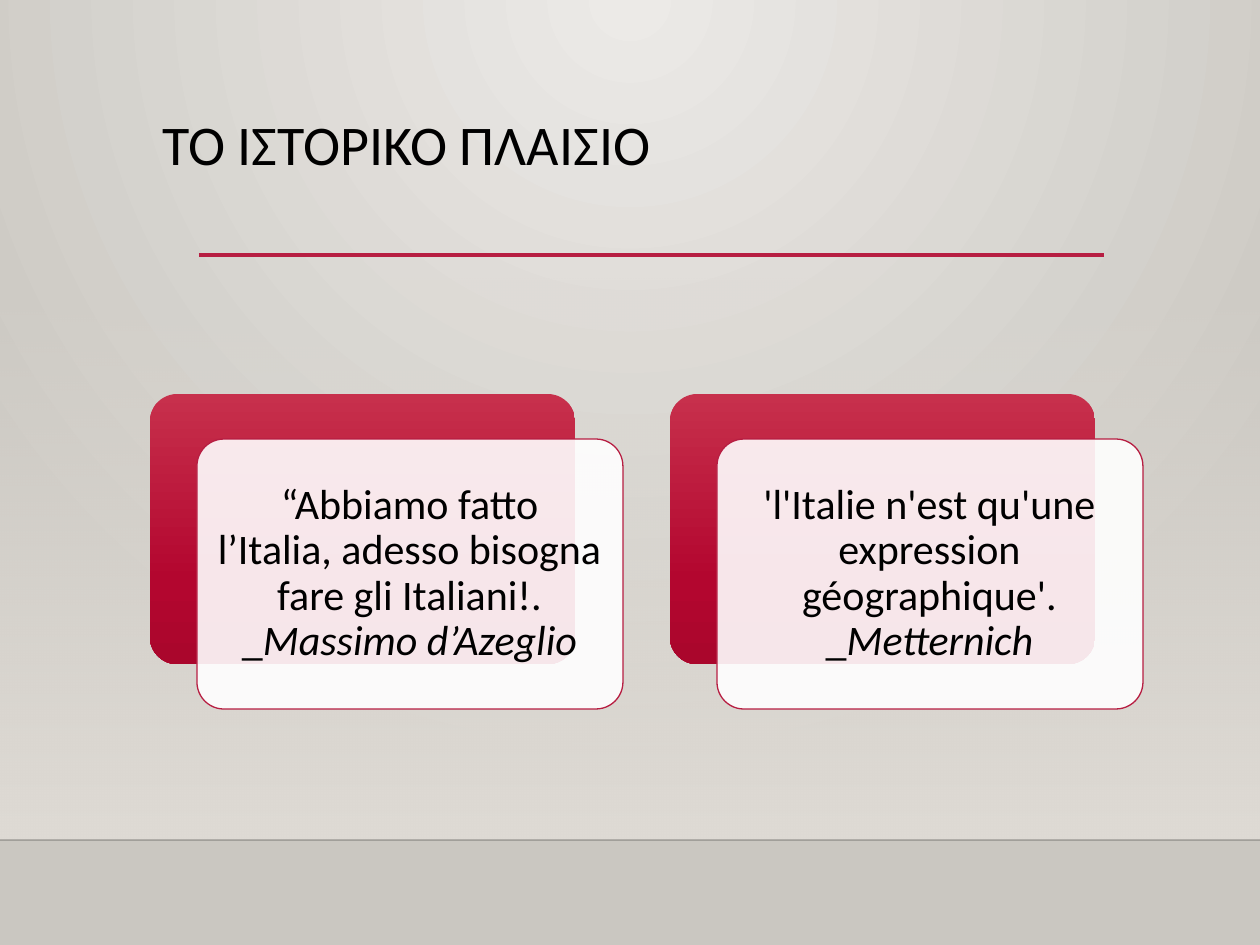
from lxml.etree import SubElement
from pptx import Presentation
from pptx.dml.color import RGBColor
from pptx.enum.shapes import MSO_CONNECTOR, MSO_SHAPE
from pptx.enum.text import MSO_ANCHOR, PP_ALIGN
from pptx.oxml.ns import qn
from pptx.util import Pt

PX = 914400 / 126  # EMU in one pixel

BLACK = RGBColor(0x00, 0x00, 0x00)
WHITE = RGBColor(0xFF, 0xFF, 0xFF)
CRIMSON = RGBColor(0xB7, 0x1E, 0x42)
CRIMSON_LIGHT = RGBColor(0xC7, 0x30, 0x4C)
CRIMSON_DEEP = RGBColor(0xB3, 0x06, 0x2F)
CRIMSON_DARK = RGBColor(0xAA, 0x06, 0x2C)
WALL_LIGHT = RGBColor(0xEC, 0xEA, 0xE7)
WALL_DARK = RGBColor(0xCA, 0xC7, 0xC1)
FLOOR = RGBColor(0xDF, 0xDB, 0xD5)


def px(*lengths):
    return [round(length * PX) for length in lengths]


def set_gradient(fill, element, stops, circle=False):
    """Stops are (position %, colour, opacity %); they run downwards or from the top centre."""
    fill.gradient()
    gradient = next(element.iter(qn("a:gradFill")))
    for child in list(gradient):
        gradient.remove(child)
    stop_list = SubElement(gradient, qn("a:gsLst"))
    for position, color, opacity in stops:
        stop = SubElement(stop_list, qn("a:gs"), pos=str(position * 1000))
        color_element = SubElement(stop, qn("a:srgbClr"), val=str(color))
        if opacity < 100:
            SubElement(color_element, qn("a:alpha"), val=str(opacity * 1000))
    if circle:
        shade = SubElement(gradient, qn("a:path"), path="circle")
        SubElement(shade, qn("a:fillToRect"), l="43000", t="0", r="43000", b="100000")
    else:
        SubElement(gradient, qn("a:lin"), ang="5400000", scaled="0")


presentation = Presentation()
presentation.slide_width, presentation.slide_height = px(1260, 945)
slide = presentation.slides.add_slide(presentation.slide_layouts[6])
shapes = slide.shapes

# Background and the fade above the floor
set_gradient(slide.background.fill, slide.element,
             [(0, WALL_LIGHT, 100), (100, WALL_DARK, 100)], circle=True)
fade = shapes.add_shape(MSO_SHAPE.RECTANGLE, *px(0, 278, 1260, 562))
fade.shadow.inherit = False
fade.line.fill.background()
set_gradient(fade.fill, fade.element, [(0, FLOOR, 0), (100, FLOOR, 100)])

# Floor edge and title rule
for left, right, y, color, width, opacity in [
    (0, 1260, 840, BLACK, 1, 20),
    (199, 1104, 255, CRIMSON, 2.5, 100),
]:
    rule = shapes.add_connector(MSO_CONNECTOR.STRAIGHT, *px(left, y, right, y))
    rule.line.color.rgb = color
    rule.line.width = Pt(width)
    SubElement(next(rule.element.iter(qn("a:srgbClr"))), qn("a:alpha"), val=str(opacity * 1000))
    SubElement(rule.element.spPr, qn("a:effectLst"))

# Title
title = shapes.add_textbox(*px(150, 111, 993, 145))
title.text_frame.word_wrap = True
paragraph = title.text_frame.paragraphs[0]
paragraph.text = "ΤΟ ΙΣΤΟΡΙΚΟ ΠΛΑΙΣΙΟ"
paragraph.line_spacing = 0.9
paragraph.font.name = "Calibri"
paragraph.font.size = Pt(32)
paragraph.font.color.rgb = BLACK

# Quotation cards: crimson back, translucent front, text
quotations = [
    (["“Abbiamo fatto", "l’Italia, adesso bisogna", "fare gli Italiani!.", "_"], "Massimo d’Azeglio"),
    (["'l'Italie n'est qu'une", "expression", "géographique'.", "_"], "Metternich"),
]
for index, (lines, author) in enumerate(quotations):
    left = 150 + 520 * index

    back = shapes.add_shape(MSO_SHAPE.ROUNDED_RECTANGLE, *px(left, 394, 425, 270))
    set_gradient(back.fill, back.element,
                 [(0, CRIMSON_LIGHT, 100), (69, CRIMSON_DEEP, 100), (100, CRIMSON_DARK, 100)])
    back.line.fill.background()

    front = shapes.add_shape(MSO_SHAPE.ROUNDED_RECTANGLE, *px(left + 47, 439, 426, 270))
    front.fill.solid()
    front.fill.fore_color.rgb = WHITE
    SubElement(next(front.element.iter(qn("a:srgbClr"))), qn("a:alpha"), val="90000")
    front.line.color.rgb = CRIMSON
    front.line.width = Pt(0.75)

    for card in (back, front):
        card.adjustments[0] = 0.1
        card.shadow.inherit = False

    text_box = shapes.add_textbox(*px(left + 55, 447, 409, 254))
    frame = text_box.text_frame
    frame.word_wrap = True
    frame.vertical_anchor = MSO_ANCHOR.MIDDLE
    frame.margin_left, frame.margin_top, frame.margin_right, frame.margin_bottom = px(12, 12, 12, 12)
    paragraph = frame.paragraphs[0]
    paragraph.alignment = PP_ALIGN.CENTER
    paragraph.line_spacing = 0.9
    paragraph.font.name = "Calibri"
    paragraph.font.size = Pt(24)
    paragraph.font.color.rgb = BLACK
    for number, line in enumerate(lines):
        if number:
            paragraph.add_line_break()
        paragraph.add_run().text = line
    author_run = paragraph.add_run()
    author_run.text = author
    author_run.font.italic = True

presentation.save("out.pptx")
